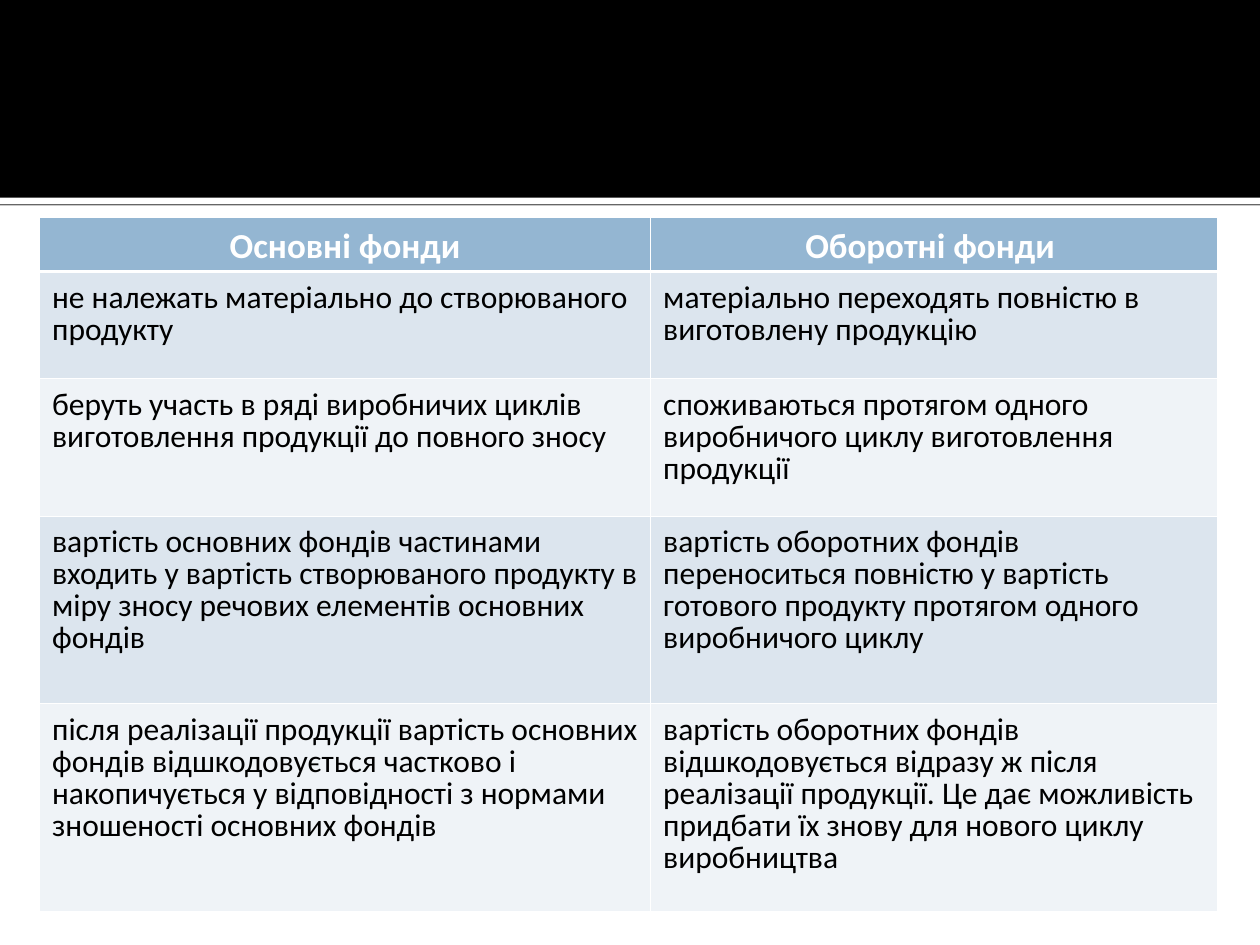
from lxml import etree
from pptx import Presentation
from pptx.dml.color import RGBColor
from pptx.enum import shapes, text
from pptx.oxml import ns
from pptx.util import Pt

WHITE = RGBColor(0xFF, 0xFF, 0xFF)
BLACK = RGBColor(0, 0, 0)
HEADER = RGBColor(0x94, 0xB6, 0xD2)
BAND_DARK = RGBColor(0xDC, 0xE5, 0xEE)
BAND_LIGHT = RGBColor(0xEF, 0xF3, 0xF7)

ROWS = [
    ("Основні фонди", "Оборотні фонди "),
    ("не належать матеріально до створюваного продукту",
     "матеріально переходять повністю в виготовлену продукцію"),
    ("беруть участь в ряді виробничих циклів виготовлення продукції до повного зносу",
     "споживаються протягом одного виробничого циклу виготовлення продукції"),
    ("вартість основних фондів частинами входить у вартість створюваного продукту "
     "в міру зносу речових елементів основних фондів",
     "вартість оборотних фондів переноситься повністю у вартість готового продукту "
     "протягом одного виробничого циклу"),
    ("після реалізації продукції вартість основних фондів відшкодовується частково "
     "і накопичується у відповідності з нормами зношеності основних фондів",
     "вартість оборотних фондів відшкодовується відразу ж після реалізації продукції. "
     "Це дає можливість придбати їх знову для нового циклу виробництва"),
]
COL_WIDTHS = [349.2, 324]
ROW_HEIGHTS = [31, 61.2, 78.5, 107.3, 118.8]


def add_band(top, height, color):
    sp = sld.shapes.add_shape(shapes.MSO_SHAPE.RECTANGLE, 0, Pt(top), prs.slide_width, Pt(height))
    sp.shadow.inherit = False
    sp.fill.solid()
    sp.fill.fore_color.rgb = color
    sp.line.fill.background()
    return sp


def set_borders(cell, widths):
    tcPr = cell._tc.get_or_add_tcPr()
    for i, (side, width) in enumerate(widths.items()):
        ln = etree.Element(ns.qn(f"a:ln{side}"), w=str(Pt(width)))
        fill = etree.SubElement(ln, ns.qn("a:solidFill"))
        etree.SubElement(fill, ns.qn("a:srgbClr"), val=str(WHITE))
        tcPr.insert(i, ln)


prs = Presentation()
prs.slide_width, prs.slide_height = Pt(720), Pt(540)
sld = prs.slides.add_slide(prs.slide_layouts[6])
sld.background.fill.solid()
sld.background.fill.fore_color.rgb = WHITE

strip = add_band(113, 3.6, WHITE)
effects = strip._element.spPr.find(ns.qn("a:effectLst"))
shadow = etree.SubElement(effects, ns.qn("a:outerShdw"), blurRad="0", dist=str(Pt(0.8)),
                          dir="5400000", algn="t", rotWithShape="0")
shade = etree.SubElement(shadow, ns.qn("a:srgbClr"), val=str(BLACK))
etree.SubElement(shade, ns.qn("a:alpha"), val="60000")
add_band(0, 113, BLACK)

tbl = sld.shapes.add_table(len(ROWS), len(COL_WIDTHS), Pt(22.6), Pt(124),
                           Pt(sum(COL_WIDTHS)), Pt(sum(ROW_HEIGHTS))).table
for col, width in zip(tbl.columns, COL_WIDTHS):
    col.width = Pt(width)
for row, height in zip(tbl.rows, ROW_HEIGHTS):
    row.height = Pt(height)

for i, row in enumerate(ROWS):
    header = i == 0
    for j, words in enumerate(row):
        cell = tbl.cell(i, j)
        cell.fill.solid()
        cell.fill.fore_color.rgb = HEADER if header else BAND_DARK if i % 2 else BAND_LIGHT
        set_borders(cell, {"L": 0.45, "R": 0.45, "T": 1.47 if i == 1 else 0.45,
                           "B": 1.47 if header else 0.45})
        cell.margin_left = cell.margin_right = Pt(7.2)
        cell.margin_top = Pt(7.2 if header else 6.5)
        cell.margin_bottom = Pt(3.6)
        cell.text_frame.text = words
        p = cell.text_frame.paragraphs[0]
        p.alignment = text.PP_ALIGN.CENTER if header else text.PP_ALIGN.LEFT
        p.line_spacing = 0.83
        font = p.runs[0].font
        font.name = "Calibri"
        font.size = Pt(20 if header else 18)
        font.bold = header
        font.color.rgb = WHITE if header else BLACK

prs.save("out.pptx")
